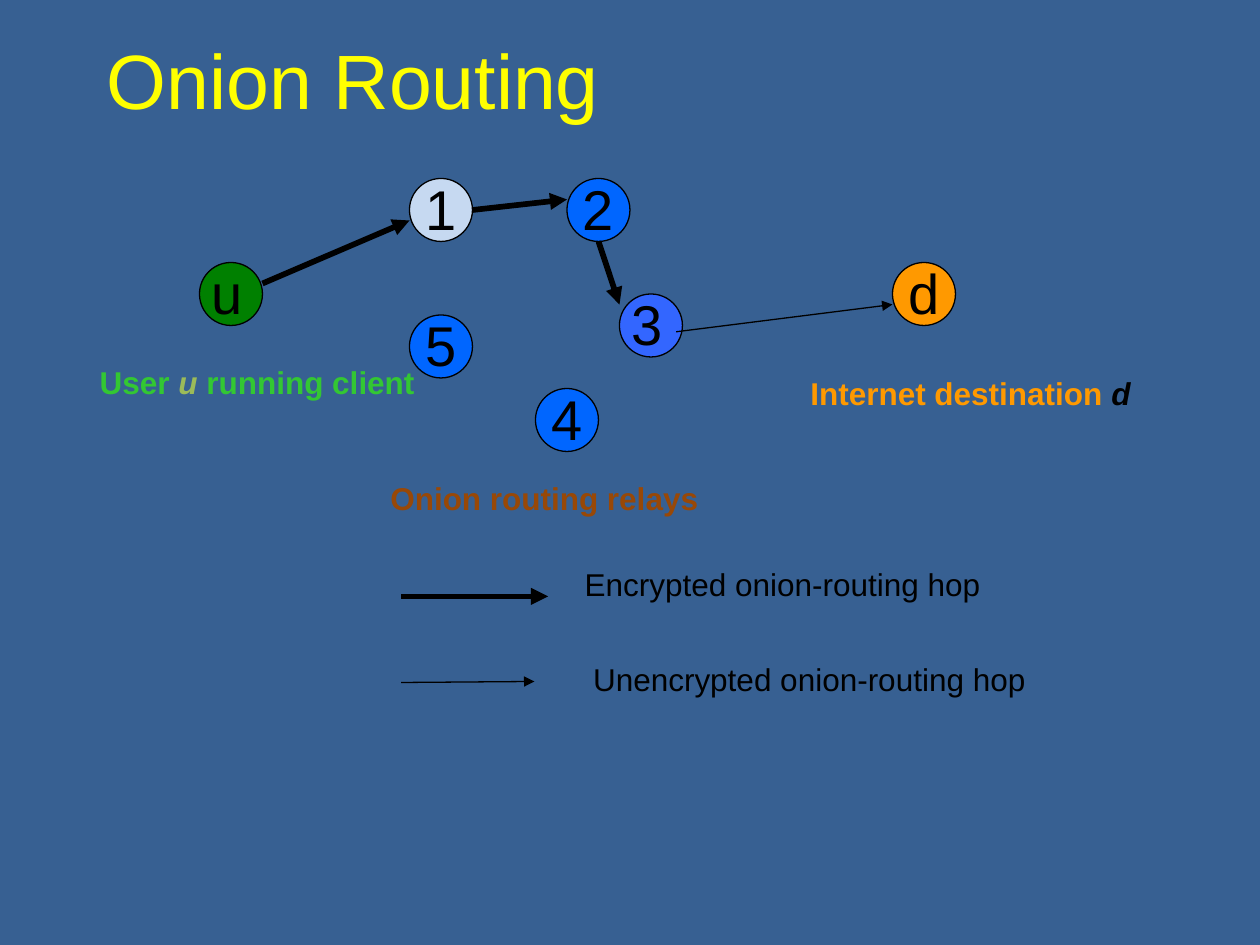
from pptx import Presentation
from pptx.dml.color import RGBColor
from pptx.enum.shapes import MSO_CONNECTOR as Connector, MSO_SHAPE as Shape
from pptx.enum.text import MSO_ANCHOR as Anchor, MSO_AUTO_SIZE as AutoSize, PP_ALIGN as Align
from pptx.oxml import parse_xml
from pptx.oxml.ns import nsdecls
from pptx.util import Inches, Pt

COLORS = {
    "background": "376092", "title": "FFFF00", "ink": "000000",
    "entry": "C6D9F1", "relay": "0066FF", "exit": "3366FF",
    "user": "008000", "destination": "FF9900",
    "user_label": "33C733", "user_name": "9BBB59", "relay_label": "984807",
}
CELL = Inches(10) // 120
NODE_SIZE = 6
THICK, THIN = 3.25, 0.75

NODES = [
    ("1", 39, 17, "entry"), ("2", 54, 17, "relay"), ("5", 39, 30, "relay"),
    ("3", 59, 28, "exit"), ("4", 51, 37, "relay"),
    ("d", 85, 25, "destination"), ("u", 19, 25, "user"),
]
HOPS = [
    ((25, 27), (39, 21), THICK), ((45, 20), (54, 19), THICK),
    ((57, 23), (59, 29), THICK), ((64.4, 31.6), (85, 29), THIN),
]
CAPTIONS = [
    ((0, 34, 49, 4.8), Align.CENTER,
     [("User ", "user_label", False), ("u", "user_name", True),
      (" running client", "user_label", False)]),
    ((76, 35, 41, 4.8), Align.LEFT,
     [("Internet destination ", "destination", False), ("d", "ink", True)]),
    ((36, 45, 53, 4.8), Align.LEFT, [("Onion routing relays", "relay_label", False)]),
]
LEGEND = [
    ((38.2, 56.8), (52.2, 56.8), THICK, (54.6, 53.2), "Encrypted onion-routing hop"),
    ((38.2, 65), (50.9, 64.9), THIN, (55.4, 62.3), "Unencrypted onion-routing hop"),
]


def grid(*cells):
    """Turn grid columns and rows into slide lengths."""
    return [round(cell * CELL) for cell in cells]


def color(key):
    """Look up a colour by its role."""
    return RGBColor.from_string(COLORS[key])


def add_text(slide, area, runs, size, align=Align.LEFT, bold=False, inset=0.1):
    """Add one line of text made of (wording, colour, italic) runs."""
    box = slide.shapes.add_textbox(*grid(*area))
    frame = box.text_frame
    frame.word_wrap = True
    frame.auto_size = AutoSize.SHAPE_TO_FIT_TEXT
    frame.margin_left = frame.margin_right = Inches(inset)
    line = frame.paragraphs[0]
    line.alignment = align
    for wording, role, italic in runs:
        run = line.add_run()
        run.text = wording
        run.font.name = "Arial"
        run.font.size = Pt(size)
        run.font.bold = bold
        run.font.italic = italic
        run.font.color.rgb = color(role)
    return frame


def add_title(slide, wording):
    """Add the slide title, centred vertically in its band."""
    frame = add_text(slide, (9, 0, 102, 15), [(wording, "title", False)], 44)
    frame.auto_size = AutoSize.NONE
    frame.vertical_anchor = Anchor.MIDDLE


def add_node(slide, column, row, role):
    """Add the circle of one network node."""
    node = slide.shapes.add_shape(Shape.OVAL, *grid(column, row, NODE_SIZE, NODE_SIZE))
    node.shadow.inherit = False
    node.fill.solid()
    node.fill.fore_color.rgb = color(role)
    node.line.color.rgb = color("ink")
    node.line.width = Pt(THIN)


def add_node_name(slide, name, column, row):
    """Add the name shown over a node."""
    width = 5 if name == "3" else NODE_SIZE
    align = Align.LEFT if name == "u" else Align.CENTER
    add_text(slide, (column, row - 1, width, 7.6), [(name, "ink", False)], 32, align)


def add_hop(slide, start, end, weight):
    """Add an arrow from one grid point to another."""
    hop = slide.shapes.add_connector(Connector.STRAIGHT, *grid(*start, *end))
    hop.line.color.rgb = color("ink")
    hop.line.width = Pt(weight)
    hop.line._get_or_add_ln().append(
        parse_xml(f'<a:tailEnd {nsdecls("a")} type="triangle"/>'))
    hop._element.spPr.append(parse_xml(f'<a:effectLst {nsdecls("a")}/>'))


def main():
    """Build the onion routing slide."""
    deck = Presentation()
    deck.slide_width, deck.slide_height = grid(120, 90)
    slide = deck.slides.add_slide(deck.slide_layouts[6])
    slide.background.fill.solid()
    slide.background.fill.fore_color.rgb = color("background")

    add_title(slide, "Onion Routing")
    for _, column, row, role in NODES:
        add_node(slide, column, row, role)
    for name, column, row, _ in NODES:
        add_node_name(slide, name, column, row)
    for hop in HOPS:
        add_hop(slide, *hop)
    for area, align, runs in CAPTIONS:
        add_text(slide, area, runs, 18, align, bold=True)
    for start, end, weight, corner, meaning in LEGEND:
        add_hop(slide, start, end, weight)
        add_text(slide, (*corner, 48.1, 4.7), [(meaning, "ink", False)], 18, inset=0.09)
    deck.save("out.pptx")


if __name__ == "__main__":
    main()
